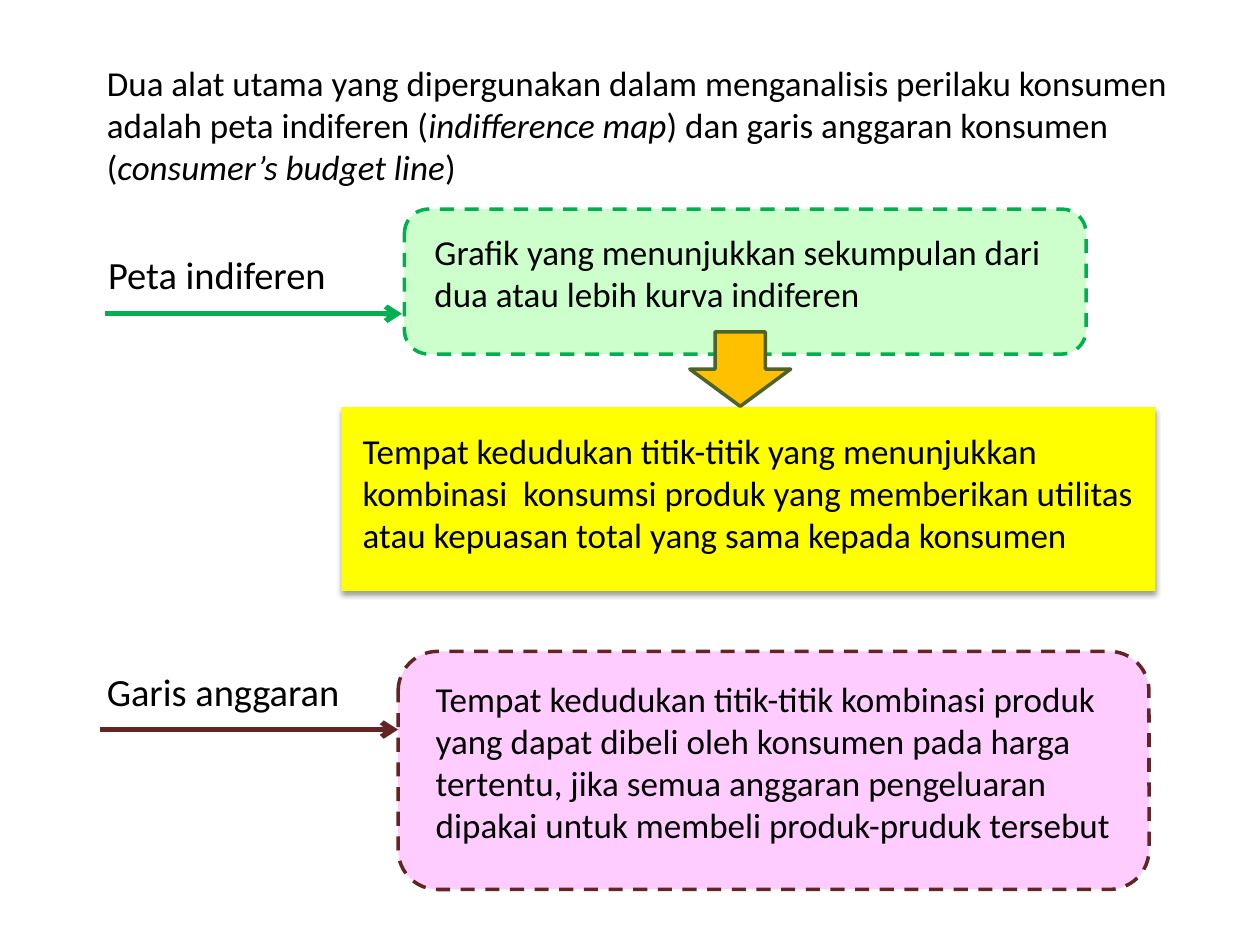
from lxml import etree
from pptx import Presentation
from pptx.dml.color import RGBColor
from pptx.enum.dml import MSO_LINE
from pptx.enum.shapes import MSO_CONNECTOR, MSO_SHAPE
from pptx.enum.text import MSO_AUTO_SIZE
from pptx.oxml import parse_xml
from pptx.oxml.ns import nsdecls, qn
from pptx.util import Pt

RECTANGLE, ROUNDED, DOWN_ARROW = (
    MSO_SHAPE.RECTANGLE, MSO_SHAPE.ROUNDED_RECTANGLE, MSO_SHAPE.DOWN_ARROW)
STRAIGHT, DASH = MSO_CONNECTOR.STRAIGHT, MSO_LINE.DASH
FIT_SHAPE = MSO_AUTO_SIZE.SHAPE_TO_FIT_TEXT

BLACK = RGBColor(0x00, 0x00, 0x00)
YELLOW = RGBColor(0xFF, 0xFF, 0x00)
PALE_GREEN = RGBColor(0xCC, 0xFF, 0xCC)
GREEN = RGBColor(0x00, 0xB0, 0x50)
PINK = RGBColor(0xFF, 0xCC, 0xFF)
MAROON = RGBColor(0x63, 0x25, 0x23)
ORANGE = RGBColor(0xFF, 0xC0, 0x00)
OLIVE = RGBColor(0x4F, 0x62, 0x28)

# Panels and arrow: preset, (left, top, width, height), fill, line, dash
PANELS = [
    (RECTANGLE, (195.1, 232.6, 465.1, 105.1), YELLOW, None, None),
    (ROUNDED, (231.1, 119.5, 389.5, 82.8), PALE_GREEN, GREEN, DASH),
    (ROUNDED, (227.5, 372.2, 429.1, 136.1), PINK, MAROON, DASH),
    (DOWN_ARROW, (394.2, 189.7, 57.6, 42.5), ORANGE, OLIVE, None),
]

# Text: (left, top, width, height), runs as (text, italic), format
TEXTS = [
    ((54, 31.7, 626.4, 79.9), [
        ("Dua alat utama yang dipergunakan dalam menganalisis perilaku konsumen "
         "adalah peta indiferen (", False),
        ("indifference map", True),
        (") dan garis anggaran konsumen (", False),
        ("consumer’s budget line", True),
        (")", False)], {}),
    ((241.2, 128.2, 391, 67.7), [
        ("Grafik yang menunjukkan sekumpulan dari dua atau lebih kurva indiferen",
         False)], {"space_before": 4}),
    ((200.2, 241.9, 463, 79.9), [
        ("Tempat kedudukan titik-titik yang menunjukkan kombinasi  konsumsi produk "
         "yang memberikan utilitas atau kepuasan total yang sama kepada konsumen",
         False)], {}),
    ((241.9, 383.8, 414.7, 104.4), [
        ("Tempat kedudukan titik-titik kombinasi produk yang dapat dibeli oleh "
         "konsumen pada harga tertentu, jika semua anggaran pengeluaran dipakai "
         "untuk membeli produk-pruduk tersebut", False)], {}),
    ((54.7, 139.7, 145.4, 33.8), [("Peta indiferen", False)],
     {"size": 22, "wrap": False}),
    ((54, 378, 149, 33.8), [("Garis anggaran", False)],
     {"size": 22, "wrap": False}),
]

# Pointers: start x, end x, y, colour
POINTERS = [(59.8, 229.7, 179.3, GREEN), (56.9, 227.5, 416.9, MAROON)]

SHADOW_XML = (
    f'<a:effectLst {nsdecls("a")}>'
    f'<a:outerShdw blurRad="{Pt(3.1)}" dist="{Pt(1.6)}" dir="5400000" rotWithShape="0">'
    '<a:srgbClr val="000000"><a:alpha val="38000"/></a:srgbClr>'
    '</a:outerShdw></a:effectLst>')


def points(values):
    return [Pt(value) for value in values]


def add_panel(slide, preset, box, fill, line, dash):
    panel = slide.shapes.add_shape(preset, *points(box))
    panel.shadow.inherit = False
    panel.fill.solid()
    panel.fill.fore_color.rgb = fill
    if line is None:
        panel.line.fill.background()
    else:
        panel.line.color.rgb = line
        panel.line.width = Pt(2)
        panel.line.dash_style = dash
    return panel


def add_text(slide, box, runs, size=20, wrap=True, space_before=0):
    text_box = slide.shapes.add_textbox(*points(box))
    frame = text_box.text_frame
    frame.word_wrap = wrap
    frame.auto_size = FIT_SHAPE
    paragraph = frame.paragraphs[0]
    paragraph.space_before = Pt(space_before)
    for text, italic in runs:
        run = paragraph.add_run()
        run.text = text
        run.font.name = "Calibri"
        run.font.size = Pt(size)
        run.font.italic = italic
        run.font.color.rgb = BLACK


def add_pointer(slide, start, end, y, color):
    pointer = slide.shapes.add_connector(STRAIGHT, *points((start, y, end, y)))
    pointer.line.color.rgb = color
    pointer.line.width = Pt(3)
    etree.SubElement(pointer.line._get_or_add_ln(), qn("a:tailEnd"), type="arrow")
    etree.SubElement(pointer._element.spPr, qn("a:effectLst"))


def main():
    presentation = Presentation()
    presentation.slide_width, presentation.slide_height = points((720, 540))
    slide = presentation.slides.add_slide(presentation.slide_layouts[6])

    panels = [add_panel(slide, *panel) for panel in PANELS]
    yellow_properties = panels[0]._element.spPr
    yellow_properties.replace(
        yellow_properties.find(qn("a:effectLst")), parse_xml(SHADOW_XML))
    for box, runs, text_format in TEXTS:
        add_text(slide, box, runs, **text_format)
    for pointer in POINTERS:
        add_pointer(slide, *pointer)

    presentation.save("out.pptx")


if __name__ == "__main__":
    main()
